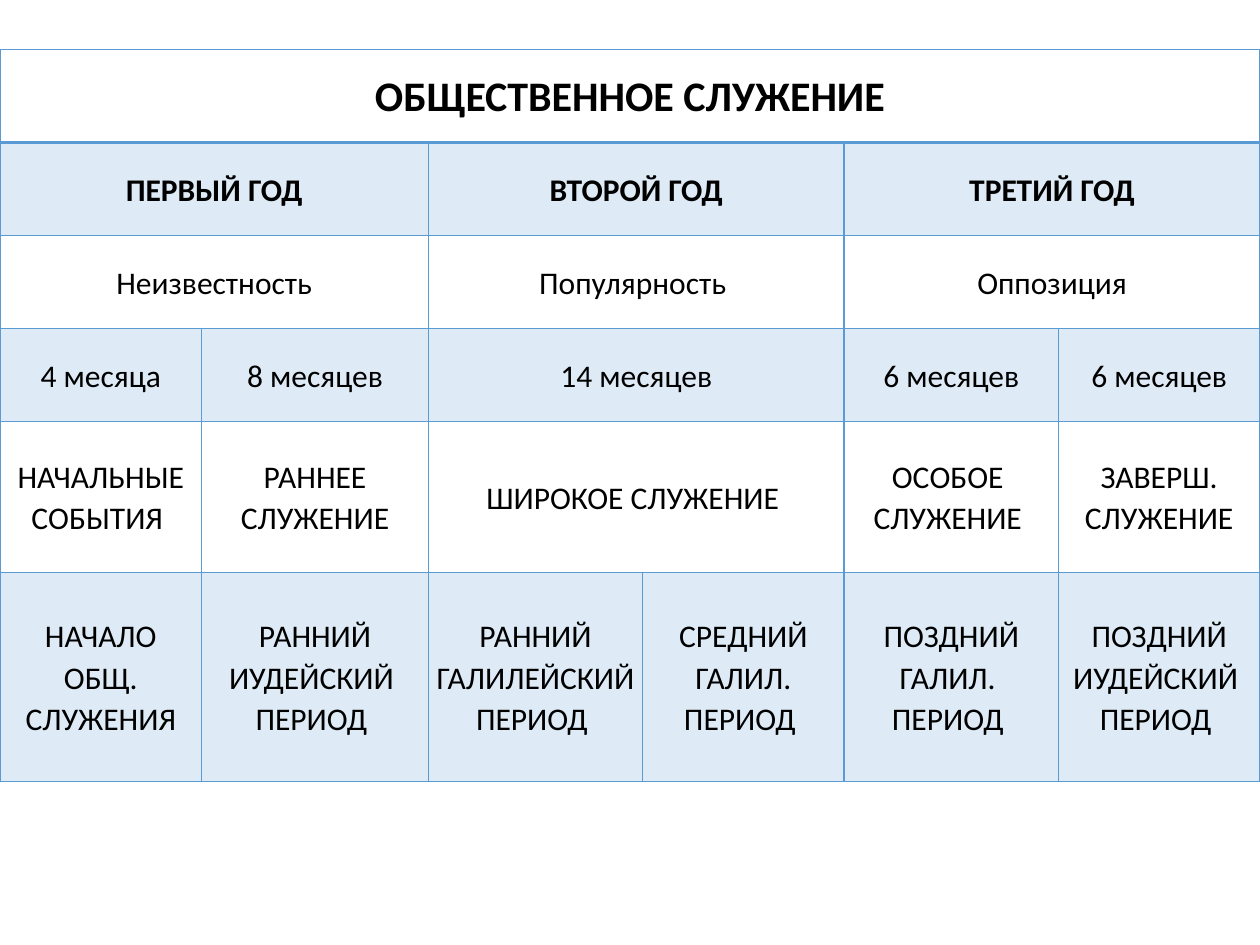
from lxml.etree import SubElement
from pptx import Presentation
from pptx.dml.color import RGBColor
from pptx.enum.text import MSO_ANCHOR, PP_ALIGN
from pptx.oxml.ns import qn
from pptx.util import Pt

BLUE = RGBColor(0x5B, 0x9B, 0xD5)
BLACK = RGBColor(0, 0, 0)

# Each row: (text, columns spanned); \v breaks a line, \n starts a paragraph
ROWS = [
    [("ОБЩЕСТВЕННОЕ СЛУЖЕНИЕ", 6)],
    [("ПЕРВЫЙ ГОД", 2), ("ВТОРОЙ ГОД", 2), ("ТРЕТИЙ ГОД", 2)],
    [("Неизвестность", 2), ("Популярность ", 2), ("Оппозиция", 2)],
    [("4 месяца", 1), ("8 месяцев", 1), ("14 месяцев", 2),
     ("6 месяцев", 1), ("6 месяцев", 1)],
    [("НАЧАЛЬНЫЕ СОБЫТИЯ ", 1), ("РАННЕЕ СЛУЖЕНИЕ", 1),
     ("ШИРОКОЕ СЛУЖЕНИЕ ", 2), ("ОСОБОЕ \vСЛУЖЕНИЕ ", 1),
     ("ЗАВЕРШ.\nСЛУЖЕНИЕ", 1)],
    [("НАЧАЛО ОБЩ.\vСЛУЖЕНИЯ", 1), ("РАННИЙ\vИУДЕЙСКИЙ \vПЕРИОД ", 1),
     ("РАННИЙ ГАЛИЛЕЙСКИЙ\vПЕРИОД ", 1), ("СРЕДНИЙ\vГАЛИЛ.\vПЕРИОД ", 1),
     ("ПОЗДНИЙ ГАЛИЛ. \vПЕРИОД ", 1), ("ПОЗДНИЙ ИУДЕЙСКИЙ \vПЕРИОД ", 1)],
]
WIDTHS = [115.2, 129.6, 122.4, 115.2, 122.4, 115.2]
HEIGHTS = [53.2, 53.2, 53.2, 53.2, 86.2, 119.5]
TOP = 28.2

CELL = {"vertical_anchor": MSO_ANCHOR.MIDDLE, "margin_left": Pt(3.6),
        "margin_right": Pt(3.6), "margin_top": Pt(3.6),
        "margin_bottom": Pt(3.6)}
PARA = {"alignment": PP_ALIGN.CENTER, "line_spacing": 1.07}


def apply(obj, values):
    for name, value in values.items():
        setattr(obj, name, value)


def border(cell, row):
    """Draw all four edges, with a heavier rule under the heading row."""
    props = cell._tc.get_or_add_tcPr()
    for side in "LRTB":
        heavy = (row, side) in ((0, "B"), (1, "T"))
        line = SubElement(props, qn(f"a:ln{side}"),
                          w=str(Pt(2 if heavy else 1)))
        fill = SubElement(line, qn("a:solidFill"))
        SubElement(fill, qn("a:srgbClr"), val=str(BLUE))


def shade(cell, row):
    """Tint every second row with translucent blue."""
    if row % 2 == 0:
        cell.fill.background()
        return
    cell.fill.solid()
    cell.fill.fore_color.rgb = BLUE
    color = cell._tc.tcPr.find(f"{qn('a:solidFill')}/{qn('a:srgbClr')}")
    SubElement(color, qn("a:alpha"), val="20000")


def write(cell, text, row):
    cell.text_frame.text = text
    font = {"name": "Calibri", "size": Pt(24 if row == 0 else 18),
            "bold": row < 2}
    for para in cell.text_frame.paragraphs:
        apply(para, PARA)
        for run in para.runs:
            apply(run.font, font)
            run.font.color.rgb = BLACK


def main():
    deck = Presentation()
    deck.slide_width, deck.slide_height = Pt(720), Pt(540)
    slide = deck.slides.add_slide(deck.slide_layouts[6])
    table = slide.shapes.add_table(
        len(ROWS), len(WIDTHS), 0, Pt(TOP),
        Pt(sum(WIDTHS)), Pt(sum(HEIGHTS))).table
    table.first_row = table.horz_banding = False
    for col, width in zip(table.columns, WIDTHS):
        col.width = Pt(width)
    for i, items in enumerate(ROWS):
        table.rows[i].height = Pt(HEIGHTS[i])
        for cell in table.rows[i].cells:
            apply(cell, CELL)
            border(cell, i)
            shade(cell, i)
        col = 0
        for text, span in items:
            cell = table.cell(i, col)
            if span > 1:
                cell.merge(table.cell(i, col + span - 1))
            write(cell, text, i)
            col += span
    wide = table.cell(4, 2).text_frame.paragraphs[0]
    wide.space_after = Pt(8)
    deck.save("out.pptx")


if __name__ == "__main__":
    main()
